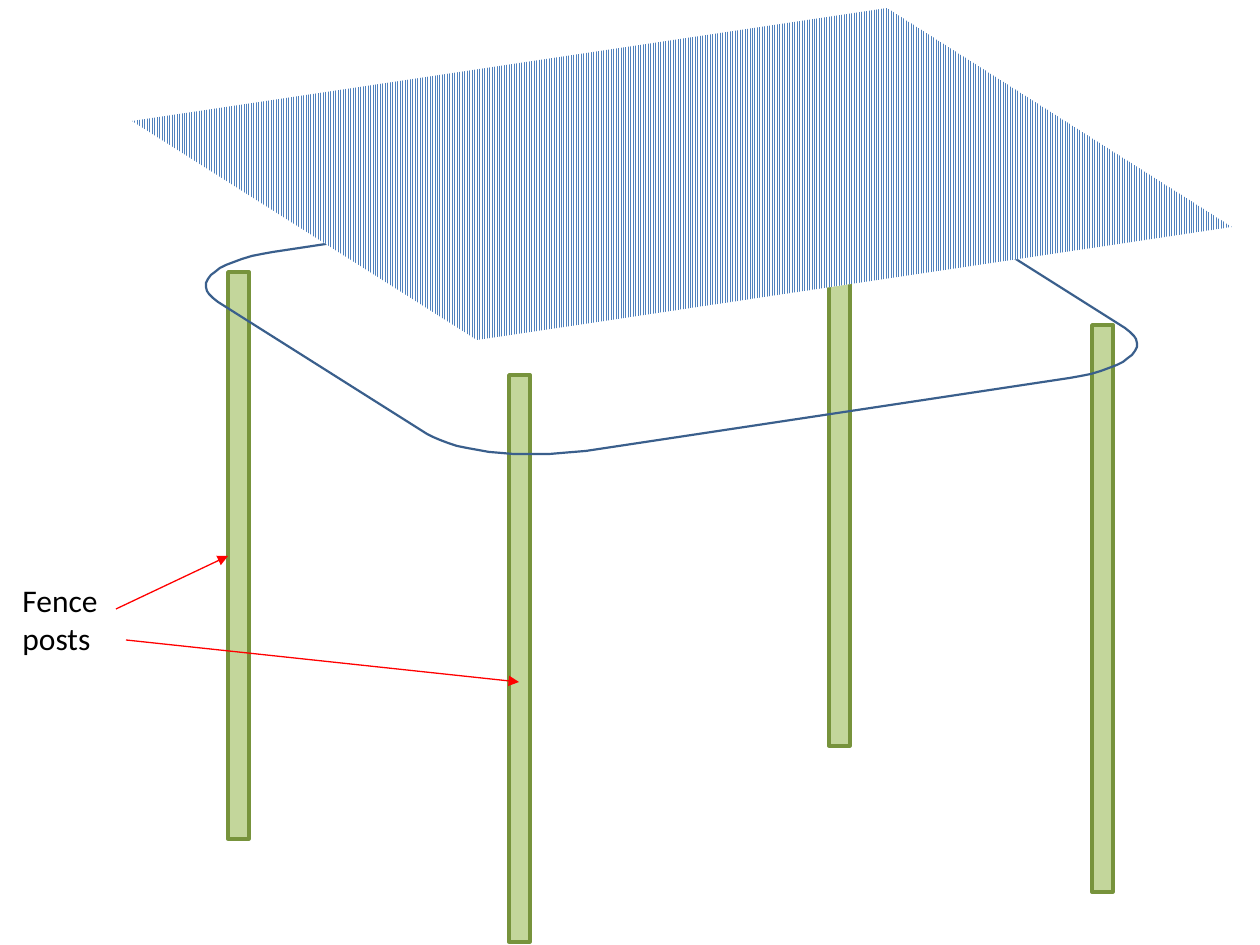
import math

import pptx
import pptx.dml.color
import pptx.enum.dml
import pptx.enum.shapes
import pptx.oxml
import pptx.oxml.ns
import pptx.util

RGBColor = pptx.dml.color.RGBColor
POST_FILL = RGBColor(0xC3, 0xD6, 0x9B)
POST_EDGE = RGBColor(0x77, 0x93, 0x3C)
ROPE = RGBColor(0x3A, 0x5F, 0x8C)
MESH = RGBColor(0x4F, 0x81, 0xBD)
WHITE = RGBColor(0xFF, 0xFF, 0xFF)
RED = RGBColor(0xFF, 0x00, 0x00)
BLACK = RGBColor(0x00, 0x00, 0x00)

PX = 914400 / 126
TURN = math.radians(26)
TILT = math.sin(math.radians(18))


def px(length):
    return pptx.util.Emu(round(length * PX))


def tilt(box, corner):
    """Turn the box about its centre and lay it back, rounding its corners."""
    left, top, width, height = box
    outline = []
    for quarter, (side_x, side_y) in enumerate([(1, 1), (-1, 1), (-1, -1), (1, -1)]):
        for step in range(0, 91, 6) if corner else [0]:
            angle = math.radians(90 * quarter + step)
            u = side_x * (width / 2 - corner) + corner * math.cos(angle)
            v = side_y * (height / 2 - corner) + corner * math.sin(angle)
            if not corner:
                u, v = side_x * width / 2, side_y * height / 2
            x = u * math.cos(TURN) + v * math.sin(TURN)
            y = (v * math.cos(TURN) - u * math.sin(TURN)) * TILT
            outline.append((left + width / 2 + x, top + height / 2 + y))
    return outline


def add_tilted_sheet(slide, box, corner=0):
    outline = tilt(box, corner)
    builder = slide.shapes.build_freeform(*outline[0], scale=PX)
    builder.add_line_segments(outline[1:], close=True)
    sheet = builder.convert_to_shape()
    sheet.shadow.inherit = False
    return sheet


def add_rope(slide, box):
    rope = add_tilted_sheet(slide, box, corner=119)
    rope.fill.background()
    rope.line.color.rgb = ROPE
    rope.line.width = pptx.util.Pt(1.25)


def add_mesh(slide, box):
    mesh = add_tilted_sheet(slide, box)
    mesh.fill.patterned()
    mesh.fill.pattern = pptx.enum.dml.MSO_PATTERN.LIGHT_VERTICAL
    mesh.fill.fore_color.rgb = MESH
    mesh.fill.back_color.rgb = WHITE
    mesh.line.fill.background()


def add_post(slide, left, top):
    post = slide.shapes.add_shape(
        pptx.enum.shapes.MSO_SHAPE.RECTANGLE, px(left), px(top), px(21), px(567))
    post.shadow.inherit = False
    post.fill.solid()
    post.fill.fore_color.rgb = POST_FILL
    post.line.color.rgb = POST_EDGE
    post.line.width = pptx.util.Pt(2)


def add_arrow(slide, start, end):
    arrow = slide.shapes.add_connector(
        pptx.enum.shapes.MSO_CONNECTOR.STRAIGHT, *map(px, start + end))
    arrow.line.color.rgb = RED
    arrow.line.width = pptx.util.Pt(0.75)
    head = pptx.oxml.parse_xml(
        f'<a:tailEnd {pptx.oxml.ns.nsdecls("a")} type="triangle"/>')
    arrow.line._get_or_add_ln().append(head)
    properties = arrow._element.spPr
    properties.append(pptx.oxml.parse_xml(
        f'<a:effectLst {pptx.oxml.ns.nsdecls("a")}/>'))


def add_post_label(slide, box):
    left, top, width, height = box
    label = slide.shapes.add_textbox(*map(px, box))
    label.text_frame.word_wrap = True
    label.text_frame.text = "Fence posts"
    font = label.text_frame.paragraphs[0].runs[0].font
    font.name = "Calibri"
    font.size = pptx.util.Pt(18)
    font.color.rgb = BLACK
    add_arrow(slide, (left + width + 11, top + 65), (519, 682))
    add_arrow(slide, (left + width + 1, top + 34), (228, 556))


def main():
    deck = pptx.Presentation()
    deck.slide_width, deck.slide_height = px(1260), px(945)
    slide = deck.slides.add_slide(deck.slide_layouts[6])
    for left, top in [(509, 375), (228, 272), (829, 179), (1092, 325)]:
        add_post(slide, left, top)
    add_rope(slide, (283, -42, 777, 714))
    add_mesh(slide, (262, -220, 840, 788))
    add_post_label(slide, (10, 575, 105, 89))
    deck.save("out.pptx")


if __name__ == "__main__":
    main()
